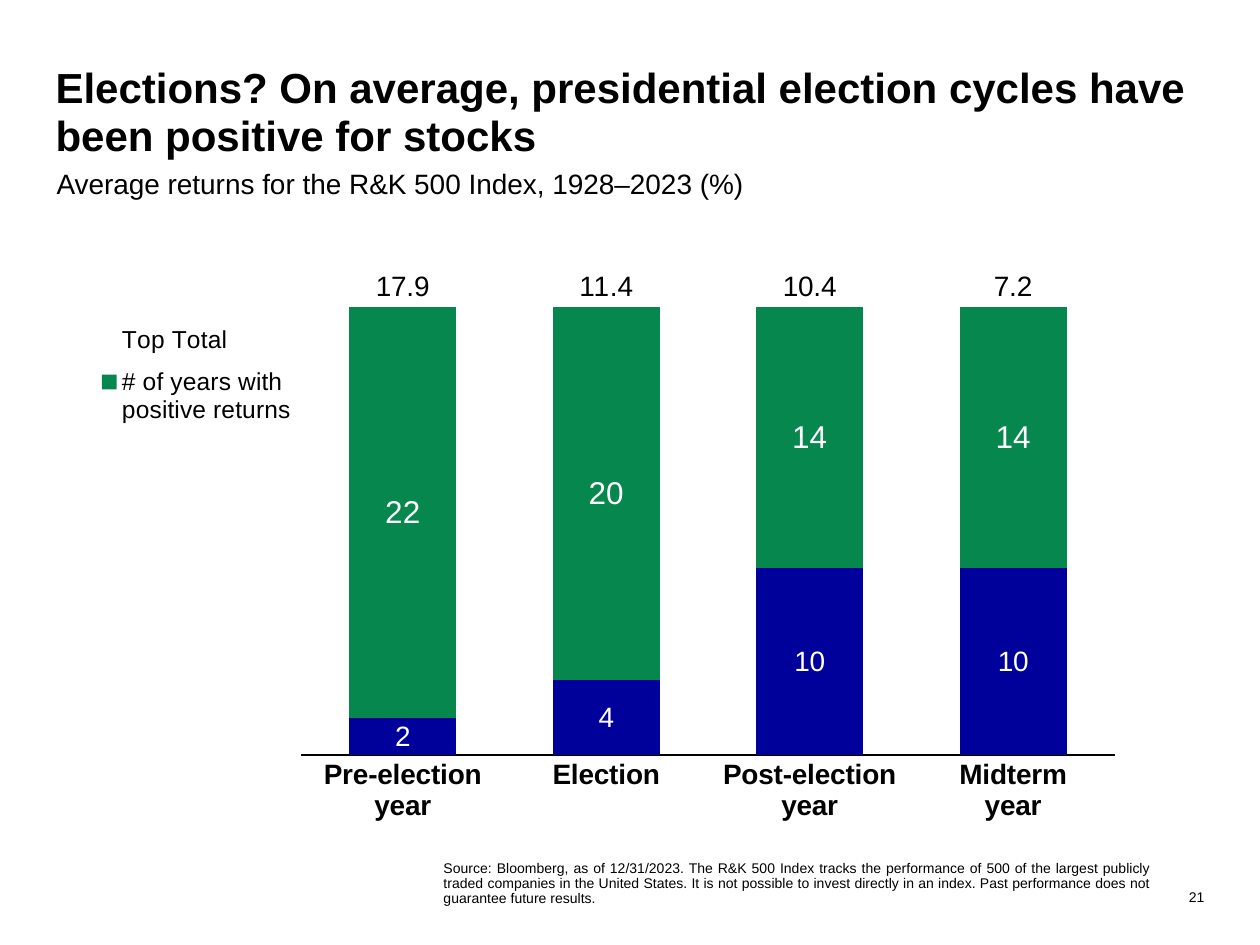
from lxml import etree
from pptx import Presentation
from pptx.chart.data import CategoryChartData
from pptx.dml.color import RGBColor
from pptx.enum.chart import XL_CHART_TYPE as ChartType
from pptx.enum.chart import XL_LABEL_POSITION as LabelPos
from pptx.enum.chart import XL_LEGEND_POSITION as LegendPos
from pptx.enum.chart import XL_TICK_LABEL_POSITION as TickLabelPos
from pptx.enum.chart import XL_TICK_MARK as TickMark
from pptx.enum.text import MSO_ANCHOR as Anchor
from pptx.enum.text import MSO_AUTO_SIZE as AutoSize
from pptx.enum.text import PP_ALIGN as Align
from pptx.oxml import parse_xml
from pptx.oxml.ns import nsdecls, qn
from pptx.util import Cm, Pt

FONT = "Arial"
COLORS = {"text": "000000", "label": "FFFFFF", "blue": "00009A", "green": "06874E"}

TITLE = "Elections? On average, presidential election cycles have been positive for stocks"
SUBTITLE = "Average returns for the R&K 500 Index, 1928–2023 (%)"
SOURCE = (
    "Source: Bloomberg, as of 12/31/2023. The R&K 500 Index tracks the performance of "
    "500 of the largest publicly traded companies in the United States. It is not possible "
    "to invest directly in an index. Past performance does not guarantee future results."
)
PAGE = "21"

CATEGORIES = ["Pre-election\nyear", "Election", "Post-election\nyear", "Midterm\nyear"]
# name, values, fill, label format, label size, label colour, label position
SERIES = [
    ("Series 1", (2, 4, 10, 10), "blue", "#,##0", 16, "label", LabelPos.CENTER),
    ("# of years with positive returns", (22, 20, 14, 14), "green", "#,##0", 18, "label",
     LabelPos.CENTER),
    ("Top Total", (17.9, 11.4, 10.4, 7.2), None, "0.0", 16, "text", LabelPos.INSIDE_BASE),
]

# left, top, width, height in cm
BOXES = {
    "title": (1.12, 1.32, 23.22, 2.21),
    "subtitle": (1.14, 3.4, 23.19, 1.27),
    "chart": (0.97, 4.72, 22.17, 12.07),
    "source": (8.94, 17.15, 14.27, 1.12),
    "page": (23.7, 17.78, 0.58, 0.48),
}
# x, y, w, h as shares of the chart
PLOT = (0.23, 0.09, 0.74, 0.78)
LEGEND = (0.04, 0.13, 0.19, 0.21)


def rgb(name):
    return RGBColor.from_string(COLORS[name])


def style(font, size, color="text", bold=False):
    font.name, font.size, font.bold = FONT, Pt(size), bold
    font.color.rgb = rgb(color)


def place(sp, box):
    sp.left, sp.top, sp.width, sp.height = (Cm(v) for v in BOXES[box])


def write(sp, text, size, bold=False, align=Align.LEFT, anchor=Anchor.TOP, spacing=1.0):
    tf = sp.text_frame
    tf.word_wrap, tf.auto_size, tf.vertical_anchor = True, AutoSize.NONE, anchor
    tf.margin_left = tf.margin_top = tf.margin_right = tf.margin_bottom = 0
    p = tf.paragraphs[0]
    p.alignment, p.line_spacing, p.space_before = align, spacing, Pt(0)
    r = p.add_run()
    r.text = text
    style(r.font, size, bold=bold)
    return p


def layout_xml(shares, inner=False):
    """Return a c:layout element that fixes a chart part's position."""
    target = '<c:layoutTarget val="inner"/>' if inner else ""
    modes = '<c:xMode val="edge"/><c:yMode val="edge"/>'
    sizes = "".join(f'<c:{k} val="{v}"/>' for k, v in zip("xywh", shares))
    return parse_xml(f"<c:layout {nsdecls('c')}><c:manualLayout>{target}{modes}{sizes}"
                     "</c:manualLayout></c:layout>")


def add_returns_chart(slide):
    data = CategoryChartData()
    data.categories = CATEGORIES
    for name, values, _, fmt, *_ in SERIES:
        data.add_series(name, values, number_format=fmt)
    box = (Cm(v) for v in BOXES["chart"])
    chart = slide.shapes.add_chart(ChartType.COLUMN_STACKED, *box, data).chart
    style(chart.font, 12)
    chart.has_title = False

    plot = chart.plots[0]
    plot.gap_width, plot.overlap, plot.vary_by_categories = 90, 100, False
    for series, (_, _, fill, fmt, size, color, position) in zip(plot.series, SERIES):
        if fill:
            series.format.fill.solid()
            series.format.fill.fore_color.rgb = rgb(fill)
        else:
            series.format.fill.background()
        labels = series.data_labels
        labels.show_value = True
        labels.number_format, labels.number_format_is_linked = fmt, False
        labels.position = position
        style(labels.font, size, color)

    cat = chart.category_axis
    cat.major_tick_mark = cat.minor_tick_mark = TickMark.NONE
    cat.format.line.color.rgb = rgb("text")
    cat.format.line.width = Pt(1)
    style(cat.tick_labels.font, 16, bold=True)

    val = chart.value_axis
    val.minimum_scale, val.maximum_scale = 0, 25
    val.has_major_gridlines = False
    val.major_tick_mark = val.minor_tick_mark = TickMark.NONE
    val.tick_label_position = TickLabelPos.NONE
    val.format.line.fill.background()

    chart.has_legend = True
    legend = chart.legend
    legend.position, legend.include_in_layout = LegendPos.RIGHT, False
    style(legend.font, 14)

    legend_el = legend._element
    for old in legend_el.findall(qn("c:layout")):
        legend_el.remove(old)
    hidden = parse_xml(f"<c:legendEntry {nsdecls('c')}><c:idx val=\"0\"/>"
                       '<c:delete val="1"/></c:legendEntry>')
    position_el = legend_el.find(qn("c:legendPos"))
    position_el.addnext(hidden)
    hidden.addnext(layout_xml(LEGEND))

    area = chart._chartSpace.chart.plotArea
    for old in area.findall(qn("c:layout")):
        area.remove(old)
    area.insert(0, layout_xml(PLOT, inner=True))


def main():
    prs = Presentation()
    prs.slide_width, prs.slide_height = Cm(25.4), Cm(19.05)
    slide = prs.slides.add_slide(prs.slide_layouts[1])

    title, source = slide.shapes.title, slide.placeholders[1]
    place(title, "title")
    write(title, TITLE, 24, bold=True, spacing=0.95)

    subtitle = slide.shapes.add_textbox(*(Cm(v) for v in BOXES["subtitle"]))
    write(subtitle, SUBTITLE, 16, spacing=0.95)

    add_returns_chart(slide)

    place(source, "source")
    p = write(source, SOURCE, 8, align=Align.JUSTIFY, anchor=Anchor.BOTTOM, spacing=0.9)
    pPr = p._p.get_or_add_pPr()
    pPr.set("marL", "0")
    pPr.set("indent", "0")
    etree.SubElement(pPr, qn("a:buNone"))

    page = slide.shapes.add_textbox(*(Cm(v) for v in BOXES["page"]))
    write(page, PAGE, 8, align=Align.RIGHT, anchor=Anchor.BOTTOM)

    prs.save("out.pptx")


if __name__ == "__main__":
    main()
